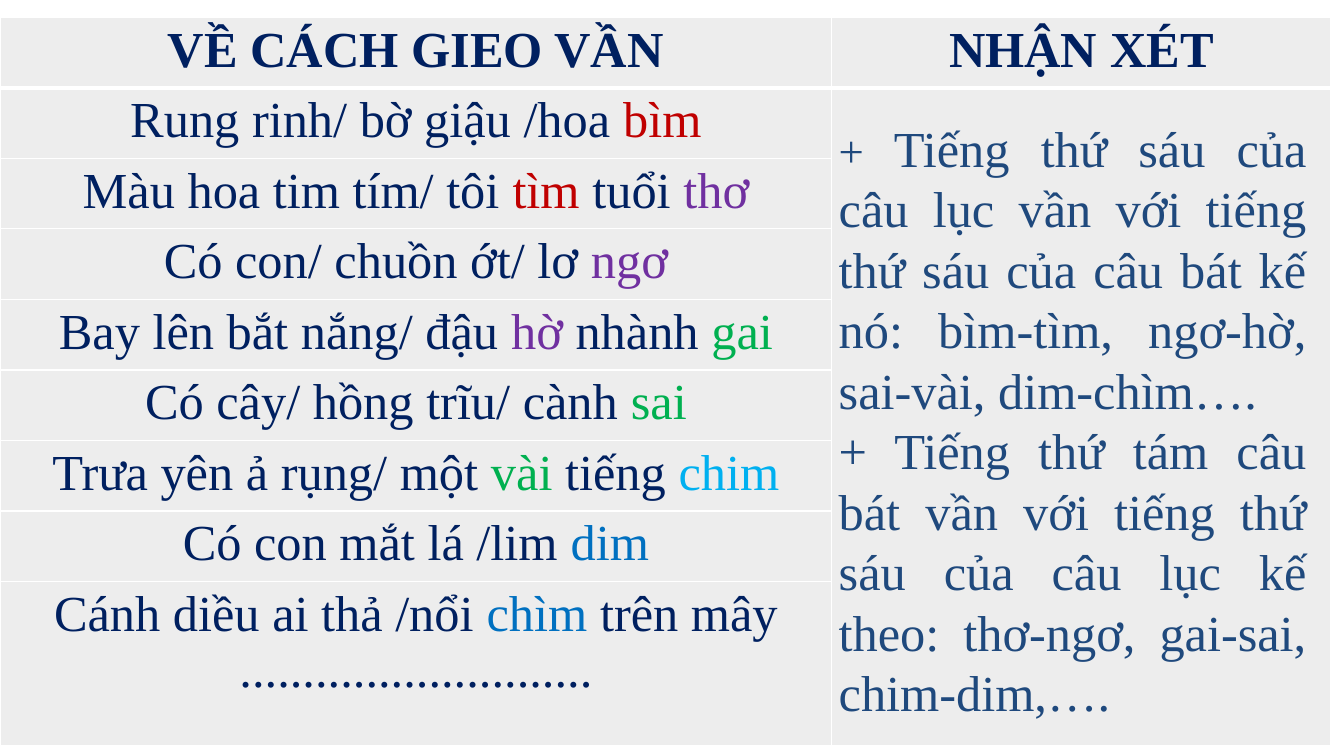
from pptx import Presentation
from pptx.dml.color import RGBColor
from pptx.enum import text as t
from pptx.oxml import parse_xml
from pptx.oxml.ns import nsdecls
from pptx.util import Inches, Pt

FACE = "Times New Roman"
NAVY = RGBColor(0x00, 0x20, 0x60)
RED = RGBColor(0xC0, 0x00, 0x00)
PURPLE = RGBColor(0x70, 0x30, 0xA0)
GREEN = RGBColor(0x00, 0xB0, 0x50)
SKY = RGBColor(0x00, 0xB0, 0xF0)
BLUE = RGBColor(0x00, 0x70, 0xC0)
SLATE = RGBColor(0x1F, 0x49, 0x7D)
GREY = RGBColor(0xED, 0xED, 0xED)
WHITE = RGBColor(0xFF, 0xFF, 0xFF)

HEADS = ["VỀ CÁCH GIEO VẦN", "NHẬN XÉT"]
VERSES = [
    [[("Rung rinh/ bờ giậu /hoa ", NAVY), ("bìm", RED)]],
    [[("Màu hoa tim tím/ tôi ", NAVY), ("tìm ", RED), ("tuổi ", NAVY), ("thơ", PURPLE)]],
    [[("Có con/ chuồn ớt/ lơ ", NAVY), ("ngơ", PURPLE)]],
    [[("Bay lên bắt nắng/ đậu ", NAVY), ("hờ ", PURPLE), ("nhành ", NAVY), ("gai", GREEN)]],
    [[("Có cây/ hồng trĩu/ cành ", NAVY), ("sai", GREEN)]],
    [[("Trưa yên ả rụng/ một ", NAVY), ("vài ", GREEN), ("tiếng ", NAVY), ("chim", SKY)]],
    [[("Có con mắt lá /lim ", NAVY), ("dim", BLUE)]],
    [[("Cánh diều ai thả /nổi ", NAVY), ("chìm ", BLUE), ("trên mây", NAVY)],
     [("............................", NAVY)]],
]
NOTES = [
    [("+ ", 32), ("Tiếng thứ sáu của câu lục vần với tiếng thứ sáu của câu bát kế nó: "
                  "bìm-tìm, ngơ-hờ, sai-vài, dim-chìm….", 36)],
    [("+ Tiếng thứ tám câu bát vần với tiếng thứ sáu của câu lục kế theo: "
      "thơ-ngơ, gai-sai, chim-dim,….", 36)],
]


def add_lines(frame, lines, align, bold=False):
    """Fill a frame with lines of (words, colour, size) runs."""
    for i, line in enumerate(lines):
        para = frame.add_paragraph() if i else frame.paragraphs[0]
        para.alignment = align
        para.font.name = FACE
        para.font.bold = bold
        for words, tint, size in line:
            run = para.add_run()
            run.text = words
            run.font.name = FACE
            run.font.size = Pt(size)
            run.font.bold = bold
            run.font.color.rgb = tint


def style_cell(cell, base):
    """Give a cell its grey fill and white borders."""
    props = cell._tc.get_or_add_tcPr()
    for side in "LRTB":
        wide = Pt(base if side == "B" else 1)
        props.append(parse_xml(
            f'<a:ln{side} {nsdecls("a")} w="{wide}"><a:solidFill>'
            f'<a:srgbClr val="{WHITE}"/></a:solidFill></a:ln{side}>'))
    cell.fill.solid()
    cell.fill.fore_color.rgb = GREY


def add_grid(slide):
    """Add the table of verses with its merged remark column."""
    count = len(VERSES) + 1
    grid = slide.shapes.add_table(
        count, 2, 0, Inches(0.17), Inches(13.2), Inches(7.23)).table
    for col, wide in zip(grid.columns, (8.25, 4.95)):
        col.width = Inches(wide)
    for i, row in enumerate(grid.rows):
        row.height = Inches(1.63 if i == count - 1 else 0.7)
        for cell in row.cells:
            style_cell(cell, 1 if i else 3)
    grid.cell(1, 1).merge(grid.cell(count - 1, 1))
    for i, head in enumerate(HEADS):
        add_lines(grid.cell(0, i).text_frame, [[(head, NAVY, 36)]],
                  t.PP_ALIGN.CENTER, True)
    for i, verse in enumerate(VERSES, 1):
        lines = [[(words, tint, 36) for words, tint in line] for line in verse]
        add_lines(grid.cell(i, 0).text_frame, lines, t.PP_ALIGN.CENTER)


def add_notes(slide):
    """Add the justified remarks over the right column."""
    box = slide.shapes.add_textbox(
        Inches(8.22), Inches(1.11), Inches(4.84), Inches(6.16))
    frame = box.text_frame
    frame.word_wrap = True
    frame.auto_size = t.MSO_AUTO_SIZE.SHAPE_TO_FIT_TEXT
    lines = [[(words, SLATE, size) for words, size in line] for line in NOTES]
    add_lines(frame, lines, t.PP_ALIGN.JUSTIFY)


def main():
    """Build and save the slide."""
    deck = Presentation()
    deck.slide_width, deck.slide_height = Inches(13.33), Inches(7.5)
    slide = deck.slides.add_slide(deck.slide_layouts[6])
    add_grid(slide)
    add_notes(slide)
    deck.save("out.pptx")


if __name__ == "__main__":
    main()
